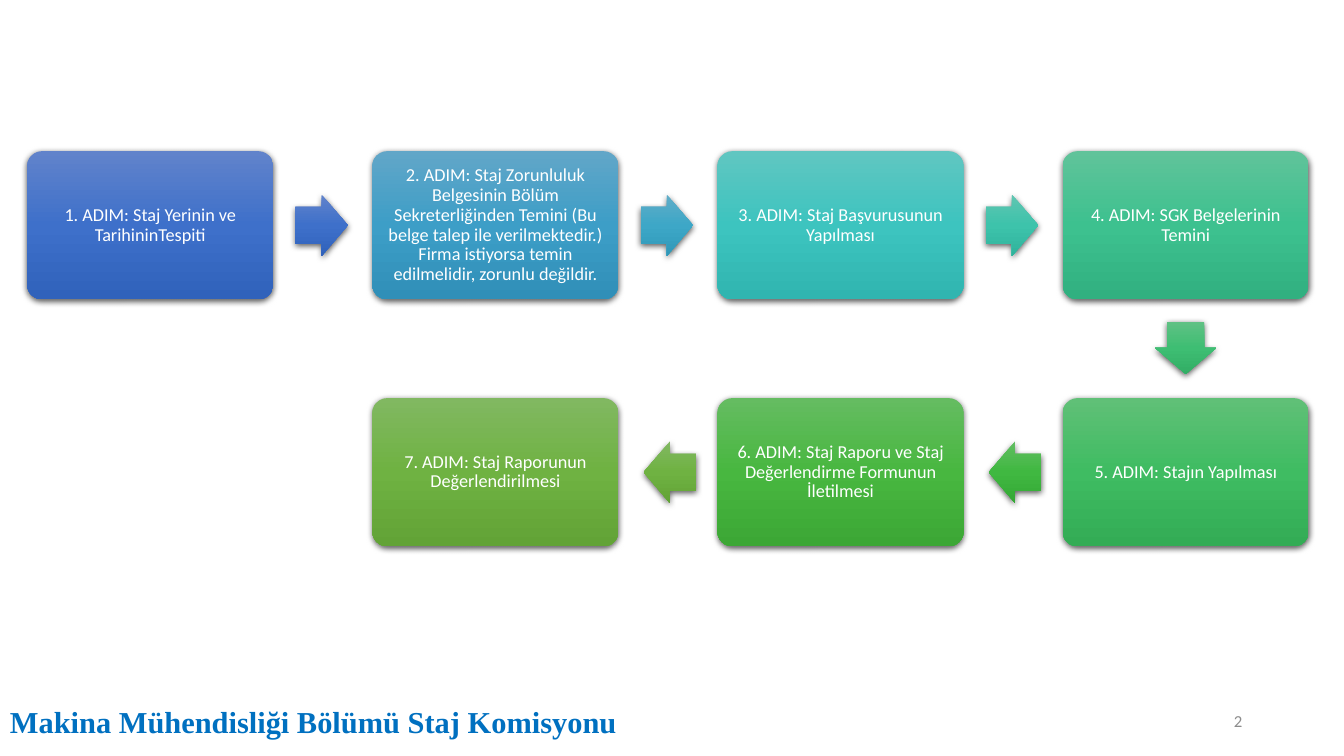
"""Build the slide with the seven steps of the internship process."""
from lxml.etree import SubElement
from pptx import Presentation
from pptx.dml.color import RGBColor
from pptx.enum.shapes import MSO_SHAPE
from pptx.enum.text import MSO_ANCHOR, PP_ALIGN
from pptx.oxml.ns import qn
from pptx.util import Inches, Pt

COLORS = {
    "step text": "FFFFFF", "footer": "0070C0", "page number": "8C8C8C", "shadow": "000000",
    "step 1": "6183CB 3E70CA 3062BB", "arrow 1": "6183CB 3E70CA 3062BB",
    "step 2": "61A6C8 3D9EC7 308FB8", "arrow 2": "61ADC8 3DA7C7 3098B8",
    "step 3": "60C6C1 3DC4BF 30B5B0", "arrow 3": "60C5B1 3DC3AB 30B39C",
    "step 4": "60C39A 3DC18F 31B080", "arrow 4": "60C184 3EBE73 32AE65",
    "step 5": "60C077 3FBC62 33AC55", "arrow 5": "61BD61 40B841 34A835",
    "step 6": "65BC61 48B740 3CA735", "arrow 6": "81B861 6FB242 62A336",
    "step 7": "81B861 6FB242 62A336",
}
STEP_WIDTH, STEP_HEIGHT = 2.44, 1.47
ARROW_LENGTH, ARROW_BREADTH = 0.52, 0.61
COLUMNS = [0.27 + column * 10.27 / 3 for column in range(4)]
ROWS = [1.5, 3.95]

steps = [
    ("1. ADIM: Staj Yerinin ve TarihininTespiti", 0, 0, "right"),
    ("2. ADIM: Staj Zorunluluk Belgesinin Bölüm Sekreterliğinden Temini "
     "(Bu belge talep ile verilmektedir.) Firma istiyorsa temin edilmelidir, "
     "zorunlu değildir.", 1, 0, "right"),
    ("3. ADIM: Staj Başvurusunun Yapılması", 2, 0, "right"),
    ("4. ADIM: SGK Belgelerinin Temini", 3, 0, "down"),
    ("5. ADIM: Stajın Yapılması", 3, 1, "left"),
    ("6. ADIM: Staj Raporu ve Staj Değerlendirme Formunun İletilmesi", 2, 1, "left"),
    ("7. ADIM: Staj Raporunun Değerlendirilmesi", 1, 1, None),
]
side_top = (STEP_HEIGHT - ARROW_BREADTH) / 2
arrows = {
    "right": (MSO_SHAPE.RIGHT_ARROW, 2.66, side_top, ARROW_LENGTH, ARROW_BREADTH),
    "left": (MSO_SHAPE.LEFT_ARROW, 2.69 - 10.27 / 3, side_top, ARROW_LENGTH, ARROW_BREADTH),
    "down": (MSO_SHAPE.DOWN_ARROW, (STEP_WIDTH - ARROW_BREADTH) / 2, 1.69,
             ARROW_BREADTH, ARROW_LENGTH),
}

presentation = Presentation()
presentation.slide_width, presentation.slide_height = Inches(13.33), Inches(7.5)
slide = presentation.slides.add_slide(presentation.slide_layouts[6])


def add_glossy(preset, box, adjustments, color):
    """Add a shape with a three-stop vertical gradient and a soft shadow."""
    shape = slide.shapes.add_shape(preset, *map(Inches, box))
    for index, value in enumerate(adjustments):
        shape.adjustments[index] = value
    shape.line.fill.background()
    shape.fill.gradient()
    shape.fill.gradient_angle = 270
    properties = shape.element.spPr
    stops = properties.find(".//" + qn("a:gsLst"))
    for stop in list(stops):
        stops.remove(stop)
    for position, value in zip((0, 50000, 100000), COLORS[color].split()):
        stop = SubElement(stops, qn("a:gs"), pos=str(position))
        SubElement(stop, qn("a:srgbClr"), val=value)
    shape.shadow.inherit = False
    shadow = SubElement(properties.find(qn("a:effectLst")), qn("a:outerShdw"),
                        blurRad=str(Pt(4.5)), dist=str(Pt(1.5)), dir="5400000",
                        algn="ctr", rotWithShape="0")
    tint = SubElement(shadow, qn("a:srgbClr"), val=COLORS["shadow"])
    SubElement(tint, qn("a:alpha"), val="63000")
    return shape


def write(frame, text, color, frame_format, paragraph_format, font_format):
    """Fill a text frame with one formatted paragraph."""
    paragraph = frame.paragraphs[0]
    run = paragraph.add_run()
    run.text = text
    run.font.color.rgb = RGBColor.from_string(COLORS[color])
    for target, values in ((frame, frame_format), (paragraph, paragraph_format),
                           (run.font, font_format)):
        for name, value in values.items():
            setattr(target, name, value)


step_frame = {"word_wrap": True, "vertical_anchor": MSO_ANCHOR.MIDDLE}
step_frame.update({f"margin_{side}": Inches(0.05) for side in ("left", "top", "right", "bottom")})

for number, (text, column, row, direction) in enumerate(steps, 1):
    left, top = COLUMNS[column], ROWS[row]
    step = add_glossy(MSO_SHAPE.ROUNDED_RECTANGLE, (left, top, STEP_WIDTH, STEP_HEIGHT),
                      [0.1], f"step {number}")
    write(step.text_frame, text, "step text", step_frame,
          {"alignment": PP_ALIGN.CENTER, "line_spacing": 0.9},
          {"name": "Calibri", "size": Pt(13)})
    if direction:
        preset, across, down, width, height = arrows[direction]
        add_glossy(preset, (left + across, top + down, width, height),
                   [0.6, 0.5], f"arrow {number}")

footer = slide.shapes.add_textbox(Inches(0), Inches(7.03), Inches(6.78), Inches(0.47))
write(footer.text_frame, "Makina Mühendisliği Bölümü Staj Komisyonu", "footer",
      {"word_wrap": True}, {"line_spacing": 0.7},
      {"name": "Times New Roman", "size": Pt(21.7), "bold": True})

page_number = slide.shapes.add_textbox(Inches(9.42), Inches(6.95), Inches(3), Inches(0.4))
write(page_number.text_frame, "2", "page number",
      {"word_wrap": True, "vertical_anchor": MSO_ANCHOR.MIDDLE},
      {"alignment": PP_ALIGN.RIGHT}, {"name": "Calibri", "size": Pt(12)})

presentation.save("out.pptx")
